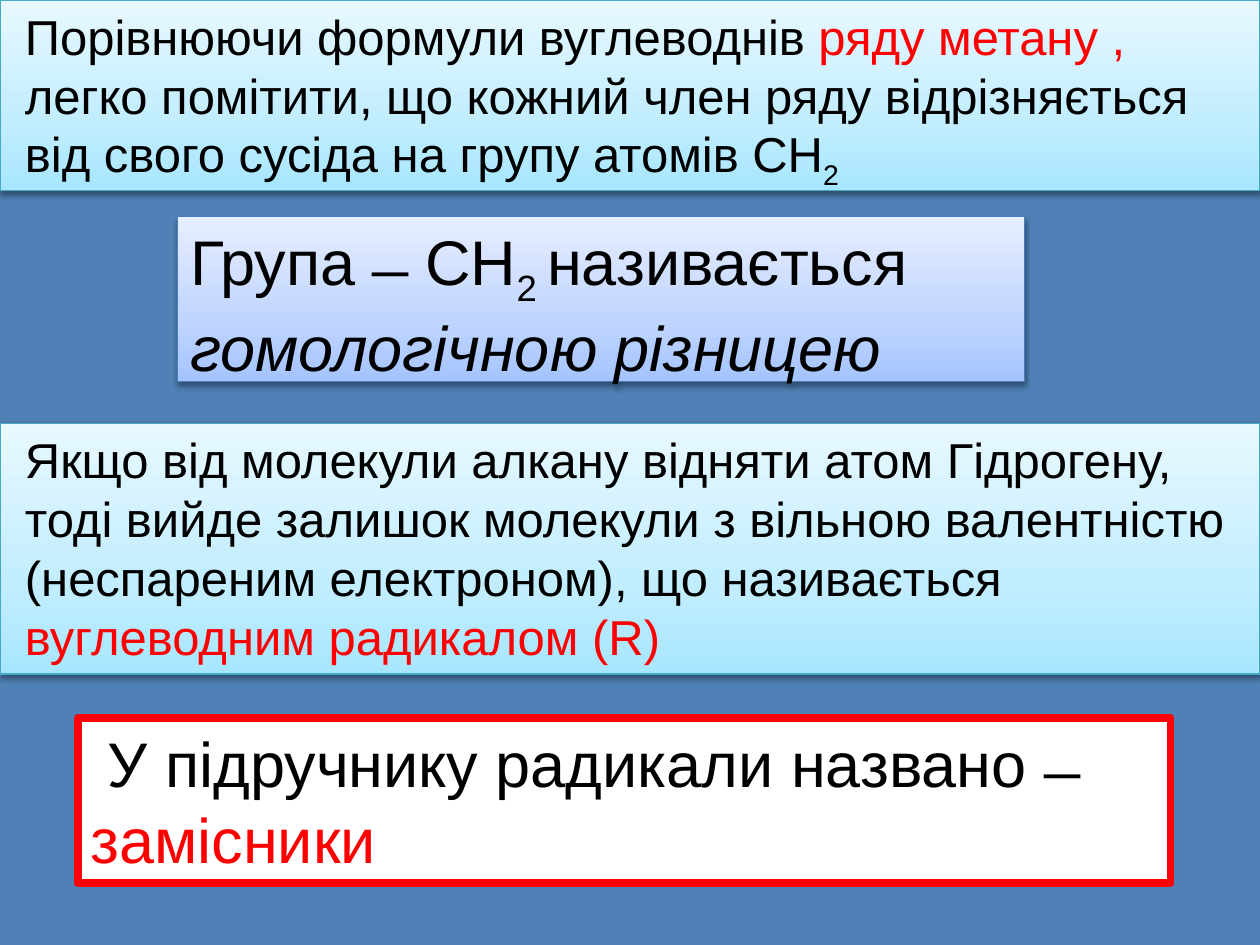
from copy import deepcopy

from lxml import etree
from pptx import Presentation
from pptx.dml.color import RGBColor
from pptx.enum.text import MSO_ANCHOR, MSO_AUTO_SIZE, PP_ALIGN
from pptx.oxml.ns import qn
from pptx.util import Inches, Pt

TOP = MSO_ANCHOR.TOP
GROW = MSO_AUTO_SIZE.SHAPE_TO_FIT_TEXT
LEFT = PP_ALIGN.LEFT

BACKGROUND = RGBColor(0x4F, 0x81, 0xB7)
BLACK = RGBColor(0, 0, 0)
RED = RGBColor(0xFF, 0, 0)
WHITE = RGBColor(0xFF, 0xFF, 0xFF)
AQUA_LINE = RGBColor(0x46, 0xAA, 0xC5)
BLUE_LINE = RGBColor(0x4B, 0x7E, 0xBC)
AQUA_STOPS = (RGBColor(0xA7, 0xE6, 0xFF), RGBColor(0xC1, 0xED, 0xFF), RGBColor(0xE7, 0xF8, 0xFF))
BLUE_STOPS = (RGBColor(0xA4, 0xC4, 0xFF), RGBColor(0xBF, 0xD4, 0xFF), RGBColor(0xE6, 0xEE, 0xFF))
STOP_POSITIONS = (0, 0.35, 1)


def add_run(paragraph, text, size, color=BLACK, italic=None, subscript=False):
    run = paragraph.add_run()
    run.text = text
    font = run.font
    font.name, font.size, font.italic = "Arial", Pt(size), italic
    font.color.rgb = color
    if subscript:
        font._element.set("baseline", "-25000")


def fill_gradient(shape, colors):
    """Fill with three stops running from the bottom edge to the top."""
    shape.fill.gradient()
    shape.fill.gradient_angle = 90
    stop_list = shape._element.spPr.find(qn("a:gradFill")).find(qn("a:gsLst"))
    stop_list.append(deepcopy(stop_list[0]))
    for stop, color, position in zip(shape.fill.gradient_stops, colors, STOP_POSITIONS):
        stop.color.rgb = color
        stop.position = position


def add_shadow(shape):
    shape.shadow.inherit = False
    effects = shape._element.spPr.find(qn("a:effectLst"))
    shadow = etree.SubElement(effects, qn("a:outerShdw"), blurRad="40000", dist="20000",
                              dir="5400000", rotWithShape="0")
    color = etree.SubElement(shadow, qn("a:srgbClr"), val="000000")
    etree.SubElement(color, qn("a:alpha"), val="38000")


def add_panel(slide, box, runs, size, line_color, line_width=0.75, stops=None, indent=0):
    """Place one framed statement; each run is a text and its format."""
    shape = slide.shapes.add_textbox(*(Inches(length) for length in box))
    if stops:
        fill_gradient(shape, stops)
        add_shadow(shape)
    else:
        shape.fill.solid()
        shape.fill.fore_color.rgb = WHITE
    shape.line.color.rgb = line_color
    shape.line.width = Pt(line_width)

    frame = shape.text_frame
    frame.word_wrap = True
    frame.auto_size = GROW
    frame.vertical_anchor = TOP
    paragraph = frame.paragraphs[0]
    paragraph.alignment = LEFT
    if indent:
        paragraph._p.get_or_add_pPr().set("marL", str(Inches(indent)))
    for text, run_format in runs:
        add_run(paragraph, text, size, **run_format)


def add_explanation(slide, box, runs):
    add_panel(slide, box, runs, 28, AQUA_LINE, stops=AQUA_STOPS, indent=0.1)


def main():
    presentation = Presentation()
    presentation.slide_width = Inches(10)
    presentation.slide_height = Inches(7.5)
    slide = presentation.slides.add_slide(presentation.slide_layouts[6])
    slide.background.fill.solid()
    slide.background.fill.fore_color.rgb = BACKGROUND

    # Methane series
    add_explanation(slide, (0, 0, 10, 1.51), [
        ("Порівнюючи формули вуглеводнів ", {}),
        ("ряду метану , ", {"color": RED}),
        ("легко помітити, що кожний член ряду відрізняється "
         "від свого сусіда на групу атомів СН", {}),
        ("2", {"subscript": True}),
    ])

    # Definition of the homologous difference
    add_panel(slide, (1.41, 1.72, 6.72, 1.31), [
        ("Група  ̶  СН", {}),
        ("2 ", {"subscript": True}),
        ("називається ", {}),
        ("гомологічною різницею", {"italic": True}),
    ], 36, BLUE_LINE, stops=BLUE_STOPS)

    # Hydrocarbon radical
    add_explanation(slide, (0, 3.36, 10, 1.99), [
        ("Якщо від молекули алкану відняти атом Гідрогену, тоді вийде залишок молекули "
         "з вільною валентністю (неспареним електроном), що називається  ", {}),
        ("вуглеводним радикалом (R)", {"color": RED}),
    ])

    # Textbook term
    add_panel(slide, (0.62, 5.7, 8.67, 1.31), [
        (" У підручнику радикали названо  ̶  ", {}),
        ("замісники", {"color": RED}),
    ], 36, RED, line_width=4.5)

    presentation.save("out.pptx")


if __name__ == "__main__":
    main()
